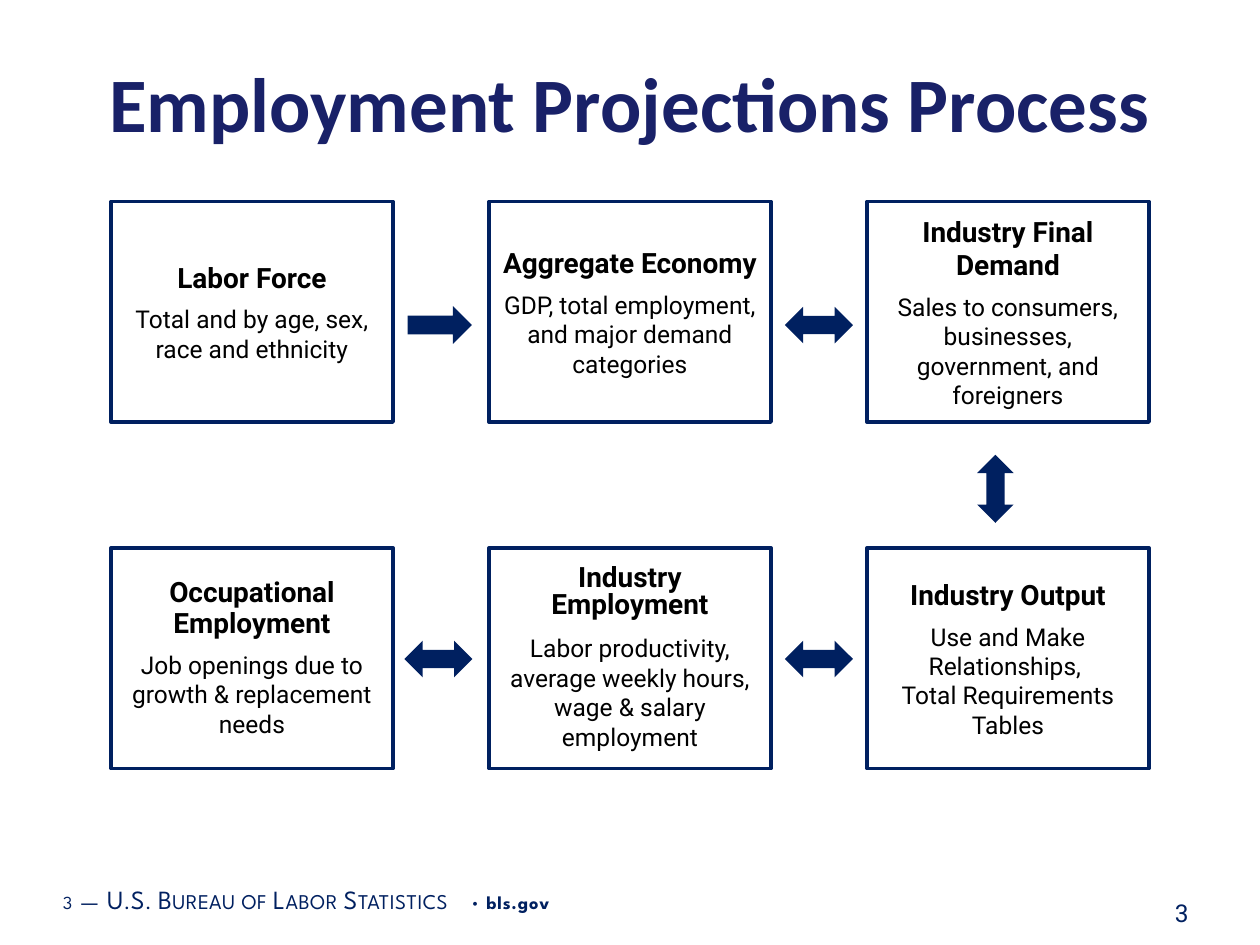
from copy import deepcopy
from dataclasses import dataclass

from pptx import Presentation
from pptx.dml.color import RGBColor
from pptx.enum.shapes import MSO_SHAPE
from pptx.enum.text import MSO_ANCHOR, MSO_AUTO_SIZE, PP_ALIGN
from pptx.oxml.ns import qn
from pptx.util import Inches, Pt

NAVY = RGBColor(0x00, 0x20, 0x60)
TITLE_BLUE = RGBColor(0x19, 0x21, 0x68)
BLACK = RGBColor(0x00, 0x00, 0x00)
WHITE = RGBColor(0xFF, 0xFF, 0xFF)

RECTANGLE = MSO_SHAPE.RECTANGLE
ONE_WAY = MSO_SHAPE.RIGHT_ARROW
TWO_WAY = MSO_SHAPE.LEFT_RIGHT_ARROW
MIDDLE = MSO_ANCHOR.MIDDLE
CENTER = PP_ALIGN.CENTER

LEFT, TOP = 0.88, 1.6
COLUMN_STEP, ROW_STEP = 3, 2.75
BOX_WIDTH, BOX_HEIGHT = 2.24, 1.75

HEADING_FONT = {"name": "Roboto", "size": Pt(16), "bold": True}
DETAIL_FONT = {"name": "Roboto", "size": Pt(14), "bold": False}


@dataclass(frozen=True)
class Stage:
    column: int
    row: int
    heading: str
    detail: str
    heading_spacing: float = 1.0
    gap: float = 6


@dataclass(frozen=True)
class Arrow:
    center_x: float
    center_y: float
    kind: int = TWO_WAY
    width: float = 0.54
    height: float = 0.29
    rotation: float = 0


@dataclass(frozen=True)
class FooterPart:
    text: str
    size: float
    spacing: float
    small_caps: bool = False
    bold: bool = False


STAGES = (
    Stage(0, 0, "Labor Force", "Total and by age, sex, race and ethnicity"),
    Stage(1, 0, "Aggregate Economy",
          "GDP, total employment, and major demand categories"),
    Stage(2, 0, "Industry Final Demand",
          "Sales to consumers, businesses, government, and foreigners"),
    Stage(2, 1, "Industry Output",
          "Use and Make Relationships, \vTotal Requirements Tables"),
    Stage(1, 1, "Industry Employment",
          "Labor productivity, average weekly hours, wage & salary employment",
          heading_spacing=0.8, gap=8),
    Stage(0, 1, "Occupational Employment",
          "Job openings due to growth & replacement needs",
          heading_spacing=0.9),
)

ARROWS = (
    Arrow(3.49, 2.58, ONE_WAY, 0.51, 0.3),
    Arrow(6.5, 2.58),
    Arrow(7.9, 3.88, rotation=90),
    Arrow(6.5, 5.23),
    Arrow(3.48, 5.23),
)

FOOTER = (
    FooterPart("3", 10.5, 0.5),
    FooterPart(" ", 16, 0.5),
    FooterPart("—", 15, 0.3, small_caps=True),
    FooterPart(" ", 16, 0.5),
    FooterPart("U.S. Bureau of Labor Statistics", 15, 0.3, small_caps=True),
    FooterPart(" • ", 10.5, 0.5),
    FooterPart("bls.gov", 10.5, 0.5, bold=True),
)


def apply_font(font, formats: dict, color: RGBColor) -> None:
    for attribute, value in formats.items():
        setattr(font, attribute, value)
    font.color.rgb = color


def write_centered(paragraph, text: str, formats: dict, color: RGBColor) -> None:
    paragraph.text = text
    paragraph.alignment = CENTER
    for run in paragraph.runs:
        apply_font(run.font, formats, color)
    # A line break needs its own size to keep the line height.
    for line_break in paragraph._p.findall(qn("a:br")):
        line_break.insert(0, deepcopy(paragraph.runs[0]._r.rPr))


def add_title(slide, text: str) -> None:
    title = slide.shapes.title
    title.left, title.top = Inches(0.64), Inches(0)
    title.width, title.height = Inches(8.72), Inches(1.61)
    frame = title.text_frame
    frame.auto_size = MSO_AUTO_SIZE.NONE
    frame.vertical_anchor = MIDDLE
    write_centered(frame.paragraphs[0], text,
                   {"name": "Calibri", "size": Pt(44), "bold": True}, TITLE_BLUE)


def add_stage(slide, stage: Stage) -> None:
    box = slide.shapes.add_shape(
        RECTANGLE,
        Inches(LEFT + stage.column * COLUMN_STEP),
        Inches(TOP + stage.row * ROW_STEP),
        Inches(BOX_WIDTH), Inches(BOX_HEIGHT))
    box.shadow.inherit = False
    box.fill.solid()
    box.fill.fore_color.rgb = WHITE
    box.line.color.rgb = NAVY
    box.line.width = Pt(2)
    frame = box.text_frame
    frame.word_wrap = True
    frame.vertical_anchor = MIDDLE
    heading = frame.paragraphs[0]
    write_centered(heading, stage.heading, HEADING_FONT, BLACK)
    heading.line_spacing = stage.heading_spacing
    detail = frame.add_paragraph()
    write_centered(detail, stage.detail, DETAIL_FONT, BLACK)
    detail.space_before = Pt(stage.gap)


def add_arrow(slide, arrow: Arrow) -> None:
    shape = slide.shapes.add_shape(
        arrow.kind,
        Inches(arrow.center_x - arrow.width / 2),
        Inches(arrow.center_y - arrow.height / 2),
        Inches(arrow.width), Inches(arrow.height))
    shape.rotation = arrow.rotation
    shape.shadow.inherit = False
    shape.fill.solid()
    shape.fill.fore_color.rgb = NAVY
    shape.line.fill.background()


def add_footer(slide) -> None:
    frame = slide.shapes.add_textbox(
        Inches(0.43), Inches(6.93), Inches(6.33), Inches(0.4)).text_frame
    margins = {"margin_left": 0.07, "margin_right": 0.07,
               "margin_top": 0.04, "margin_bottom": 0.04}
    for side, inset in margins.items():
        setattr(frame, side, Inches(inset))
    frame.word_wrap = True
    frame.vertical_anchor = MIDDLE
    for part in FOOTER:
        run = frame.paragraphs[0].add_run()
        run.text = part.text
        apply_font(run.font, {"name": "League Spartan", "size": Pt(part.size),
                              "bold": part.bold}, NAVY)
        properties = run._r.get_or_add_rPr()
        properties.set("spc", str(round(part.spacing * 100)))
        if part.small_caps:
            properties.set("cap", "small")


def add_page_number(slide, number: str) -> None:
    frame = slide.shapes.add_textbox(
        Inches(9.16), Inches(7.08), Inches(0.44), Inches(0.52)).text_frame
    frame.word_wrap = True
    write_centered(frame.paragraphs[0], number, DETAIL_FONT, NAVY)


def main() -> None:
    presentation = Presentation()
    presentation.slide_width = Inches(10)
    presentation.slide_height = Inches(7.5)
    slide = presentation.slides.add_slide(presentation.slide_layouts[5])
    add_footer(slide)
    add_title(slide, "Employment Projections Process")
    add_page_number(slide, "3")
    for stage in STAGES:
        add_stage(slide, stage)
    for arrow in ARROWS:
        add_arrow(slide, arrow)
    presentation.save("out.pptx")


if __name__ == "__main__":
    main()
